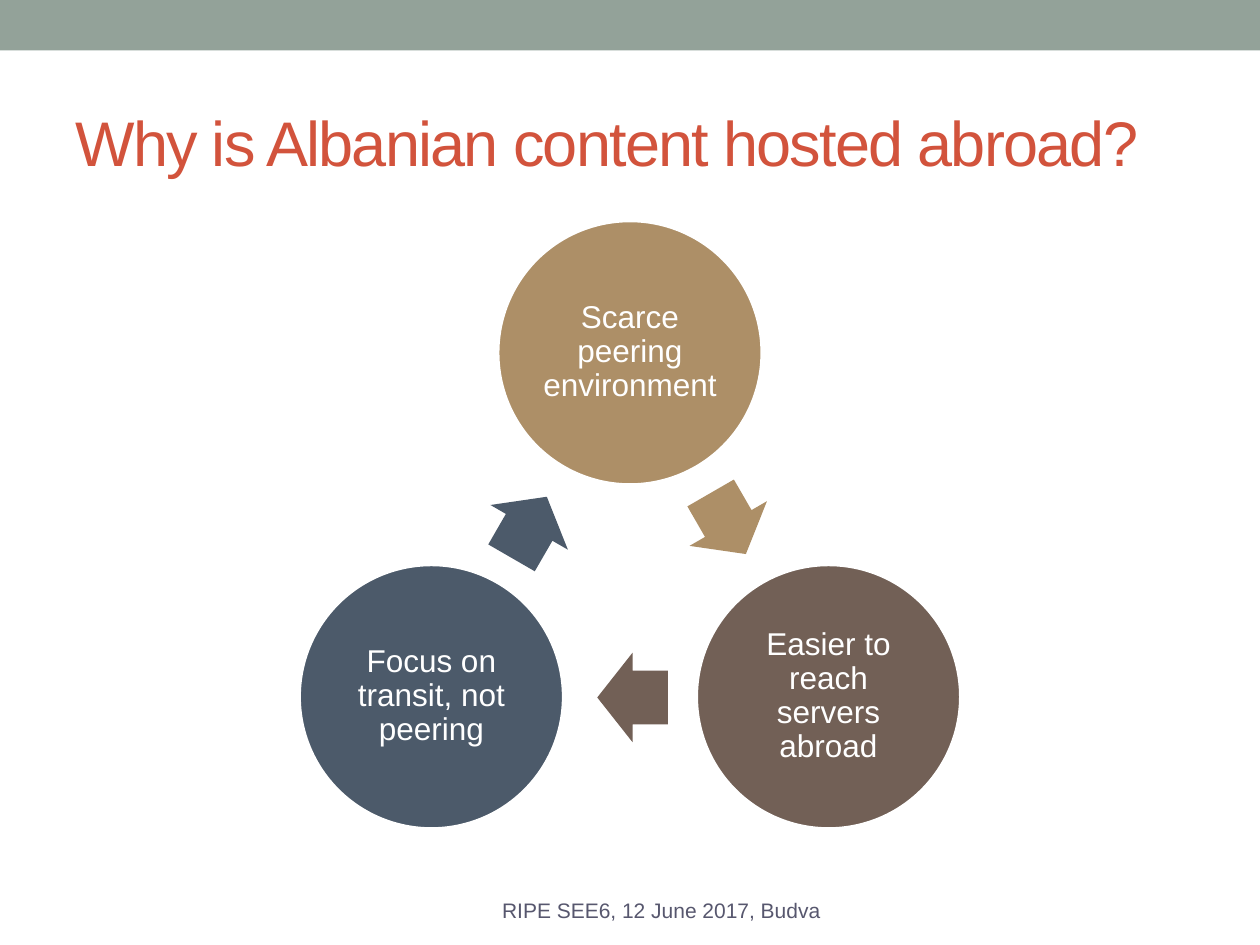
import math

from pptx import Presentation
from pptx.dml.color import RGBColor
from pptx.enum.shapes import MSO_SHAPE
from pptx.enum.text import MSO_ANCHOR, PP_ALIGN
from pptx.util import Inches, Pt

RECTANGLE = MSO_SHAPE.RECTANGLE
OVAL = MSO_SHAPE.OVAL
RIGHT_ARROW = MSO_SHAPE.RIGHT_ARROW
MIDDLE = MSO_ANCHOR.MIDDLE
LEFT = PP_ALIGN.LEFT
CENTER = PP_ALIGN.CENTER

WHITE = RGBColor(0xFF, 0xFF, 0xFF)
SAGE = RGBColor(0x93, 0xA2, 0x99)
RED = RGBColor(0xD2, 0x53, 0x3C)
GREY = RGBColor(0x57, 0x57, 0x6E)
TAN = RGBColor(0xAD, 0x8F, 0x67)
BROWN = RGBColor(0x72, 0x60, 0x56)
SLATE = RGBColor(0x4C, 0x5A, 0x6A)

CYCLE_X, CYCLE_Y, CYCLE_RADIUS = 5, 4.62, 1.82
CIRCLE_SIZE = 2.1
ARROW_WIDTH, ARROW_HEIGHT = 0.56, 0.71

REASONS = [
    ("Scarce peering environment", TAN, (5.78, 4.155)),
    ("Easier to reach servers abroad", BROWN, (5.02, 5.535)),
    ("Focus on transit, not peering", SLATE, (4.2, 4.185)),
]


def add_filled_shape(page, kind, left, top, width, height, color):
    shape = page.shapes.add_shape(
        kind, Inches(left), Inches(top), Inches(width), Inches(height))
    shape.shadow.inherit = False
    shape.fill.solid()
    shape.fill.fore_color.rgb = color
    shape.line.fill.background()
    return shape


def write_text(shape, text, size, color, align):
    frame = shape.text_frame
    frame.word_wrap = True
    frame.vertical_anchor = MIDDLE
    para = frame.paragraphs[0]
    para.text = text
    para.alignment = align
    para.font.name = "Arial"
    para.font.size = Pt(size)
    para.font.color.rgb = color
    return para


def add_text(page, left, top, width, height, text, size, color, align):
    box = page.shapes.add_textbox(
        Inches(left), Inches(top), Inches(width), Inches(height))
    return write_text(box, text, size, color, align)


def add_circle(page, center_x, center_y, text, color):
    circle = add_filled_shape(
        page, OVAL, center_x - CIRCLE_SIZE / 2, center_y - CIRCLE_SIZE / 2,
        CIRCLE_SIZE, CIRCLE_SIZE, color)
    circle.line.color.rgb = WHITE
    circle.line.width = Pt(2.08)
    frame = circle.text_frame
    frame.margin_left = frame.margin_right = Inches(0.03)
    frame.margin_top = frame.margin_bottom = Inches(0.03)
    para = write_text(circle, text, 18, WHITE, CENTER)
    para.line_spacing = 0.9


def add_arrow(page, center_x, center_y, rotation, color):
    arrow = add_filled_shape(
        page, RIGHT_ARROW, center_x - ARROW_WIDTH / 2,
        center_y - ARROW_HEIGHT / 2, ARROW_WIDTH, ARROW_HEIGHT, color)
    arrow.adjustments[0] = 0.6
    arrow.adjustments[1] = 0.5
    arrow.rotation = rotation


def add_cycle(page):
    step = 360 / len(REASONS)
    for index, (text, color, arrow_center) in enumerate(REASONS):
        angle = math.radians(index * step)
        add_circle(page, CYCLE_X + CYCLE_RADIUS * math.sin(angle),
                   CYCLE_Y - CYCLE_RADIUS * math.cos(angle), text, color)
        add_arrow(page, *arrow_center, (index + 0.5) * step, color)


def main():
    deck = Presentation()
    deck.slide_width = Inches(10)
    deck.slide_height = Inches(7.5)
    page = deck.slides.add_slide(deck.slide_layouts[6])
    add_filled_shape(page, RECTANGLE, 0, 0, 10, 0.4, SAGE)
    title = add_text(page, 0.5, 0.58, 9, 1.08,
                     "Why is Albanian content hosted abroad?", 36, RED, LEFT)
    title.runs[0].font._element.set("spc", "-100")
    add_text(page, 3, 7.04, 4.5, 0.36,
             "RIPE SEE6, 12 June 2017, Budva", 12, GREY, CENTER)
    add_cycle(page)
    deck.save("out.pptx")


if __name__ == "__main__":
    main()
